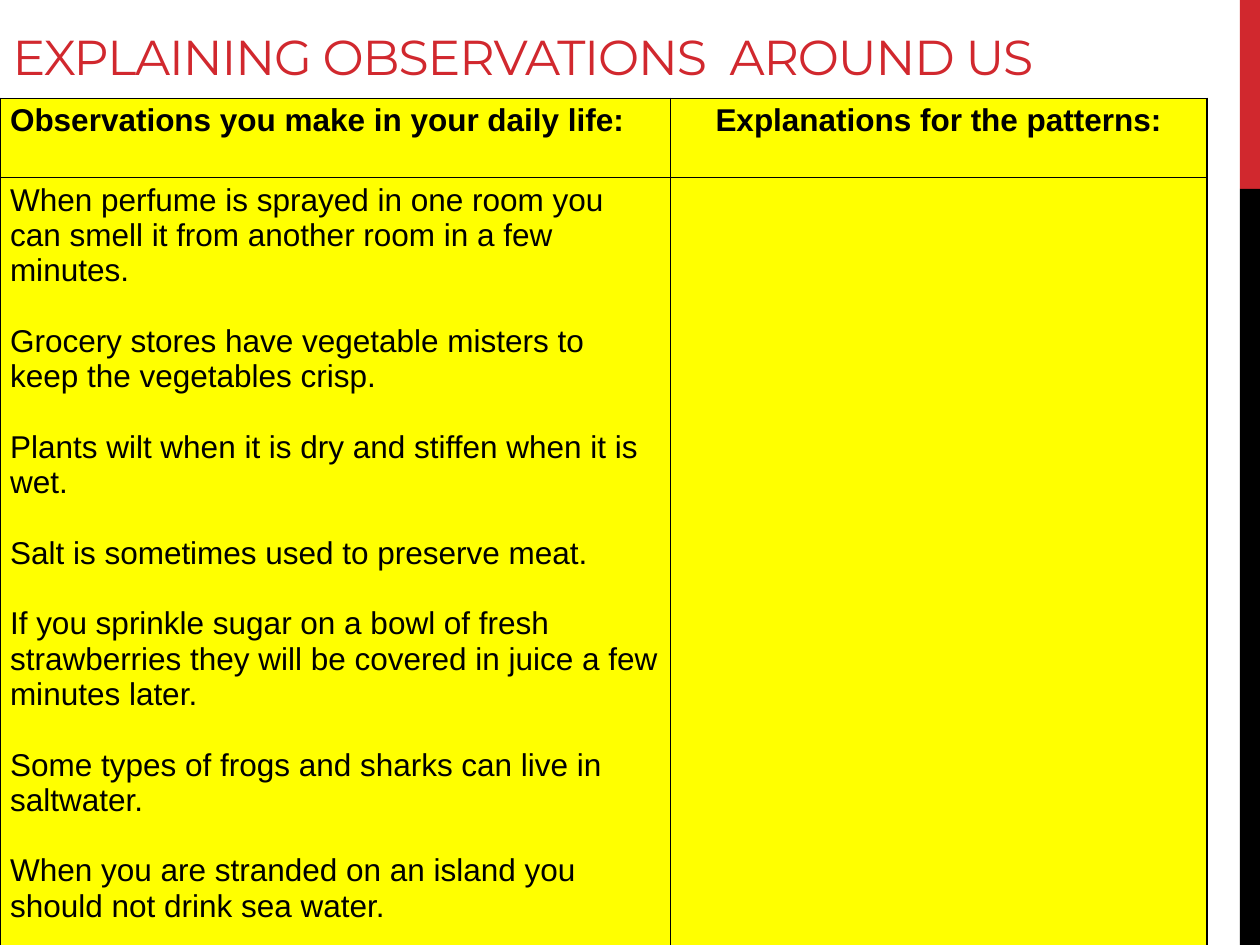
import pptx
import pptx.util
import pptx.dml.color
import pptx.enum.shapes
import pptx.enum.text
import pptx.oxml
import pptx.oxml.ns
from dataclasses import dataclass

Inches = pptx.util.Inches
Pt = pptx.util.Pt
Align = pptx.enum.text.PP_ALIGN


@dataclass(frozen=True)
class Theme:
    red: str = "D1282E"
    black: str = "000000"
    yellow: str = "FFFF00"
    head: str = "Montserrat"
    body: str = "Arial"
    large: float = 28
    text: float = 18
    gap: float = 20.2
    rule: float = 1


THEME = Theme()
TITLE = "EXPLAINING OBSERVATIONS  AROUND US"
HEADS = ["Observations you make in your daily life:", "Explanations for the patterns:"]
FACTS = [
    "When perfume is sprayed in one room you can smell it from another room in a few minutes.",
    "Grocery stores have vegetable misters to keep the vegetables crisp.",
    "Plants wilt when it is dry and stiffen when it is wet.",
    "Salt is sometimes used to preserve meat.",
    "If you sprinkle sugar on a bowl of fresh strawberries they will be covered in juice "
    "a few minutes later.",
    "Some types of frogs and sharks can live in saltwater.",
    "When you are stranded on an island you should not drink sea water.",
]


def color(code):
    return pptx.dml.color.RGBColor.from_string(code)


def write(frame, lines, font=THEME.body, size=THEME.text, ink=THEME.black,
          bold=False, align=Align.LEFT, gap=0, track=None):
    """Fill a text frame with one paragraph per line, gap points apart."""
    frame.word_wrap = True
    for i, line in enumerate(lines):
        para = frame.add_paragraph() if i else frame.paragraphs[0]
        para.alignment = align
        para.space_before = Pt(gap if i else 0)
        run = para.add_run()
        run.text = line
        run.font.name = font
        run.font.size = Pt(size)
        run.font.bold = bold
        run.font.color.rgb = color(ink)
        if track is not None:
            run.font._element.set("spc", str(round(track * 100)))


def bar(slide, left, top, width, height, fill):
    shape = slide.shapes.add_shape(
        pptx.enum.shapes.MSO_SHAPE.RECTANGLE,
        Inches(left), Inches(top), Inches(width), Inches(height))
    shape.shadow.inherit = False
    shape.fill.solid()
    shape.fill.fore_color.rgb = color(fill)
    shape.line.fill.background()


def stripe(slide, left, top, width, height):
    """Draw the side band: the top fifth red, the rest black."""
    part = height / 5
    bar(slide, left, top, width, part, THEME.red)
    bar(slide, left, top + part, width, height - part, THEME.black)


def title(slide, left, top, width, height):
    shape = slide.shapes.title
    shape.left, shape.top = Inches(left), Inches(top)
    shape.width, shape.height = Inches(width), Inches(height)
    frame = shape.text_frame
    frame.auto_size = pptx.enum.text.MSO_AUTO_SIZE.NONE
    frame.vertical_anchor = pptx.enum.text.MSO_ANCHOR.BOTTOM
    write(frame, [TITLE], font=THEME.head, size=THEME.large, ink=THEME.red, track=-0.6)


def border(cell):
    props = cell._tc.get_or_add_tcPr()
    space = pptx.oxml.ns.nsdecls("a")
    for i, side in enumerate(("lnL", "lnR", "lnT", "lnB")):
        props.insert(i, pptx.oxml.parse_xml(
            f'<a:{side} {space} w="{Pt(THEME.rule)}"><a:solidFill>'
            f'<a:srgbClr val="{THEME.black}"/></a:solidFill></a:{side}>'))


def chart(slide, left, top, width, height):
    """Place the two-column table of observations and explanations."""
    grid = slide.shapes.add_table(
        2, 2, Inches(left), Inches(top), Inches(width), Inches(height)).table
    first, head = 5.32, 0.63
    for col, size in zip(grid.columns, (first, width - first)):
        col.width = Inches(size)
    for row, size in zip(grid.rows, (head, height - head)):
        row.height = Inches(size)
    for cell in grid.iter_cells():
        cell.margin_left = cell.margin_right = Inches(0.08)
        cell.margin_top = cell.margin_bottom = Inches(0.04)
        cell.fill.solid()
        cell.fill.fore_color.rgb = color(THEME.yellow)
        border(cell)
    for i, align in enumerate((Align.LEFT, Align.CENTER)):
        write(grid.cell(0, i).text_frame, [HEADS[i]], bold=True, align=align)
    write(grid.cell(1, 0).text_frame, FACTS, gap=THEME.gap)


def main():
    deck = pptx.Presentation()
    deck.slide_width, deck.slide_height = Inches(10), Inches(7.5)
    slide = deck.slides.add_slide(deck.slide_layouts[5])
    stripe(slide, 9.84, 0, 0.16, 7.5)
    title(slide, 0, -0.02, 9.5, 0.75)
    chart(slide, 0, 0.78, 9.58, 7.01)
    deck.save("out.pptx")


if __name__ == "__main__":
    main()
